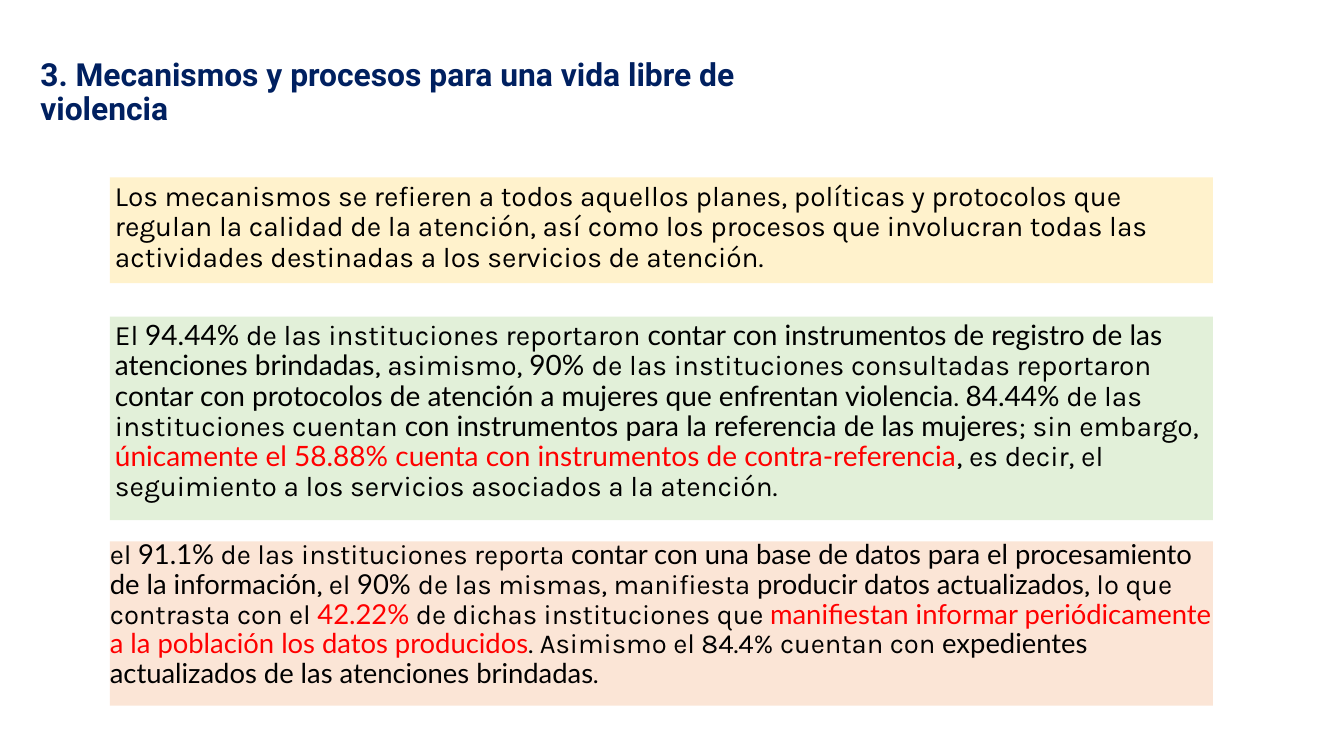
from dataclasses import dataclass

from pptx import Presentation
from pptx.dml.color import RGBColor
from pptx.enum.shapes import MSO_SHAPE
from pptx.enum.text import MSO_ANCHOR, MSO_AUTO_SIZE, PP_ALIGN
from pptx.slide import Slide
from pptx.text.text import TextFrame
from pptx.util import Pt

EMU_PER_PX = 9144  # 100 px to the inch

NAVY = RGBColor(0x00, 0x20, 0x60)
BLACK = RGBColor(0x00, 0x00, 0x00)
RED = RGBColor(0xFF, 0x00, 0x00)
YELLOW = RGBColor(0xFF, 0xF2, 0xCC)
GREEN = RGBColor(0xE2, 0xF0, 0xD9)
PEACH = RGBColor(0xFB, 0xE5, 0xD6)

PANEL_LEFT, PANEL_WIDTH = 109, 1094


@dataclass(frozen=True)
class Style:
    font: str
    color: RGBColor
    bold: bool = False


@dataclass(frozen=True)
class Panel:
    top: int
    height: int
    fill: RGBColor
    inset: int
    size: float
    space_before: int
    spans: list[tuple[str, Style]]


HEADING = Style("Roboto", NAVY, True)
PLAIN = Style("Karla", BLACK)
STRONG = Style("Lato", BLACK)
ALERT = Style("Lato", RED)

TITLE = "3. Mecanismos y procesos para una vida libre de violencia"

PANELS = [
    Panel(176, 105, YELLOW, 5, 20, 10, [
        ("Los mecanismos se refieren a todos aquellos planes, políticas y protocolos que "
         "regulan la calidad de la atención, así como los procesos que involucran todas las "
         "actividades destinadas a los servicios de atención.", PLAIN),
    ]),
    Panel(314, 202, GREEN, 5, 20, 10, [
        ("El ", PLAIN),
        ("94.44%", STRONG),
        (" de las instituciones reportaron ", PLAIN),
        ("contar con instrumentos de registro de las atenciones brindadas", STRONG),
        (", asimismo, ", PLAIN),
        ("90% ", STRONG),
        ("de las instituciones consultadas reportaron ", PLAIN),
        ("contar con protocolos de atención a mujeres que enfrentan violencia", STRONG),
        (". ", PLAIN),
        ("84.44%", STRONG),
        (" de las instituciones cuentan ", PLAIN),
        ("con instrumentos para la referencia de las mujeres", STRONG),
        ("; sin embargo, ", PLAIN),
        ("únicamente el 58.88% cuenta con instrumentos de contra-referencia", ALERT),
        (", es decir, el seguimiento a los servicios asociados a la atención.", PLAIN),
    ]),
    Panel(537, 163, PEACH, 0, 19.6, 9, [
        ("el ", PLAIN),
        ("91.1%", STRONG),
        (" de las instituciones reporta ", PLAIN),
        ("contar con una base de datos para el procesamiento de la información", STRONG),
        (", el ", PLAIN),
        ("90% ", STRONG),
        ("de las mismas, manifiesta ", PLAIN),
        ("producir datos actualizados", STRONG),
        (", lo que contrasta con el ", PLAIN),
        ("42.22%", ALERT),
        (" de dichas instituciones que ", PLAIN),
        ("manifiestan informar periódicamente a la población los datos producidos", ALERT),
        (". Asimismo el 84.4% cuentan con ", PLAIN),
        ("expedientes actualizados de las atenciones brindadas", STRONG),
        (".", PLAIN),
    ]),
]


def px(length: int) -> int:
    return length * EMU_PER_PX


def set_all(target: object, values: dict[str, object]) -> None:
    for name, value in values.items():
        setattr(target, name, value)


def write_text(frame: TextFrame, spans: list[tuple[str, Style]], size: float,
               inset: int, space_before: int, anchor: MSO_ANCHOR) -> None:
    margins = {f"margin_{side}": px(inset) for side in ("left", "top", "right", "bottom")}
    set_all(frame, {"word_wrap": True, "auto_size": MSO_AUTO_SIZE.NONE,
                    "vertical_anchor": anchor, **margins})
    para = frame.paragraphs[0]
    set_all(para, {"alignment": PP_ALIGN.LEFT, "line_spacing": 0.9,
                   "space_before": Pt(space_before)})
    for text, style in spans:
        span = para.add_run()
        span.text = text
        set_all(span.font, {"name": style.font, "size": Pt(size), "bold": style.bold})
        span.font.color.rgb = style.color


def add_title(page: Slide) -> None:
    title = page.shapes.title
    set_all(title, {"left": px(40), "top": px(54), "width": px(708), "height": px(77)})
    write_text(title.text_frame, [(TITLE, HEADING)], 22.7, 0, 0, MSO_ANCHOR.MIDDLE)


def add_panel(page: Slide, panel: Panel) -> None:
    box = page.shapes.add_shape(MSO_SHAPE.RECTANGLE, px(PANEL_LEFT), px(panel.top),
                                px(PANEL_WIDTH), px(panel.height))
    box.shadow.inherit = False
    box.fill.solid()
    box.fill.fore_color.rgb = panel.fill
    box.line.fill.background()
    write_text(box.text_frame, panel.spans, panel.size, panel.inset,
               panel.space_before, MSO_ANCHOR.TOP)


def main() -> None:
    deck = Presentation()
    set_all(deck, {"slide_width": px(1333), "slide_height": px(750)})
    title_only = deck.slide_layouts[5]
    page = deck.slides.add_slide(title_only)

    # Heading
    add_title(page)

    # Coloured text panels
    for panel in PANELS:
        add_panel(page, panel)

    deck.save("out.pptx")


if __name__ == "__main__":
    main()
